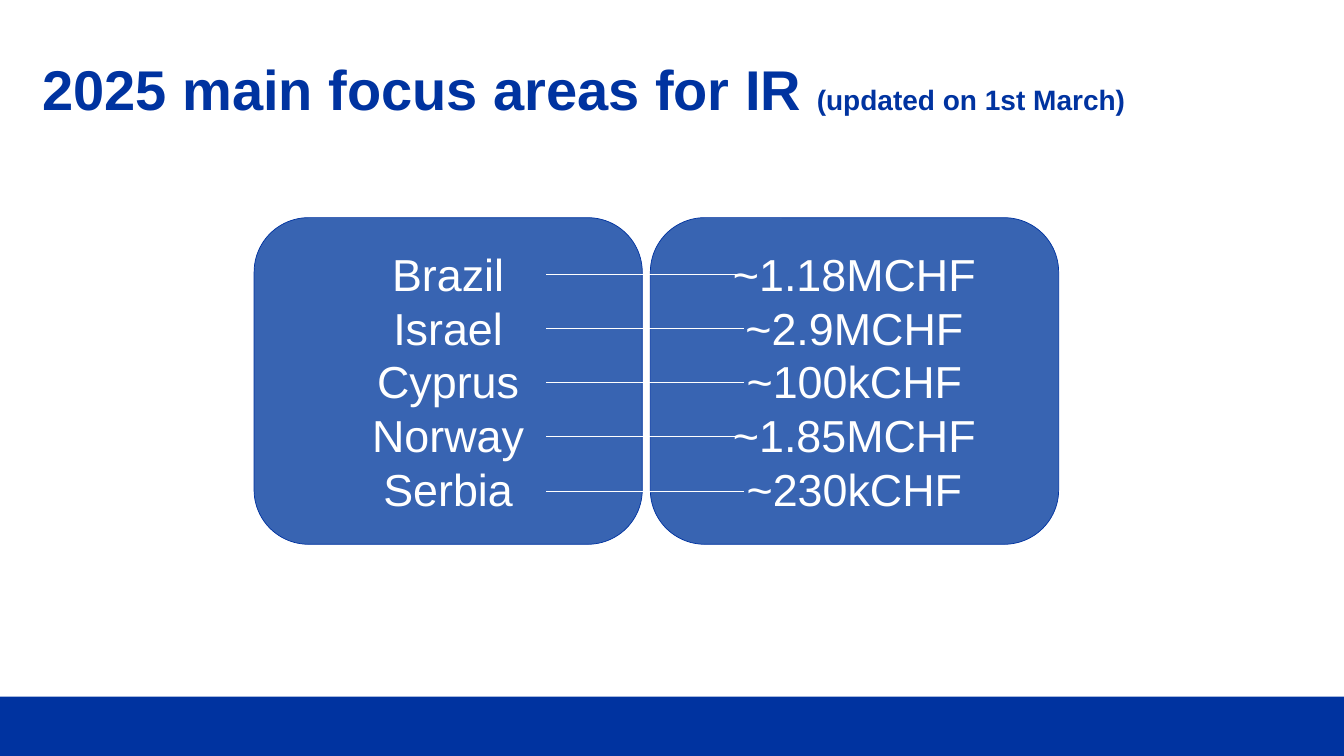
from lxml import etree
from pptx import Presentation
from pptx.dml.color import RGBColor
from pptx.enum.shapes import MSO_CONNECTOR, MSO_SHAPE
from pptx.enum.text import MSO_ANCHOR, MSO_AUTO_SIZE, PP_ALIGN
from pptx.oxml.ns import qn
from pptx.util import Inches, Pt

RECTANGLE, ROUNDED = MSO_SHAPE.RECTANGLE, MSO_SHAPE.ROUNDED_RECTANGLE
STRAIGHT = MSO_CONNECTOR.STRAIGHT
TOP, MIDDLE = MSO_ANCHOR.TOP, MSO_ANCHOR.MIDDLE
LEFT, CENTER = PP_ALIGN.LEFT, PP_ALIGN.CENTER

# Content
TITLE = [("2025 main focus areas for IR ", 40), ("(updated on 1st March)", 20)]
FOCUS_AREAS = [
    ("Brazil", "~1.18MCHF"),
    ("Israel", "~2.9MCHF"),
    ("Cyprus", "~100kCHF"),
    ("Norway", "~1.85MCHF"),
    ("Serbia", "~230kCHF"),
]

# Look and layout, in inches
FONT = "Arial"
NAVY, BLUE, WHITE = "0033A0", "3864B2", "FFFFFF"
PAGE_WIDTH, PAGE_HEIGHT, FOOTER_HEIGHT = 13.33, 7.5, 0.59
PANEL_TOP, PANEL_HEIGHT = 2.16, 3.24
PANELS = [(2.52, 3.85), (6.45, 4.05)]  # left, width
LINE_LEFT, LINE_RIGHT = 5.42, 7.38
FIRST_LINE, LAST_LINE = 2.72, 4.87


def color(value):
    return RGBColor.from_string(value)


def add_block(page, kind, left, top, width, height, fill, outline=None):
    block = page.shapes.add_shape(
        kind, Inches(left), Inches(top), Inches(width), Inches(height))
    block.shadow.inherit = False
    block.fill.solid()
    block.fill.fore_color.rgb = color(fill)
    if outline:
        block.line.color.rgb = color(outline)
        block.line.width = Pt(0.5)
    else:
        block.line.fill.background()
    return block


def add_title(page):
    title = page.shapes.title
    title.left, title.top = Inches(0.42), Inches(0.62)
    title.width, title.height = Inches(11.38), Inches(1.26)
    frame = title.text_frame
    frame.margin_left = frame.margin_right = 0
    frame.margin_top = frame.margin_bottom = 0
    frame.vertical_anchor = TOP
    frame.word_wrap = True
    frame.auto_size = MSO_AUTO_SIZE.NONE
    para = frame.paragraphs[0]
    para.alignment = LEFT
    para.line_spacing = 0.9
    para.font.name = FONT
    para.font.bold = True
    para.font.color.rgb = color(NAVY)
    for words, size in TITLE:
        span = para.add_run()
        span.text = words
        span.font.size = Pt(size)


def add_panel(page, left, width, entries):
    panel = add_block(page, ROUNDED, left, PANEL_TOP, width, PANEL_HEIGHT, BLUE, NAVY)
    frame = panel.text_frame
    frame.word_wrap = True
    frame.vertical_anchor = MIDDLE
    frame.text = "\n".join(entries)
    for para in frame.paragraphs:
        para.alignment = CENTER
        para.font.name = FONT
        para.font.size = Pt(32)
        para.font.color.rgb = color(WHITE)


def add_link(page, height):
    link = page.shapes.add_connector(
        STRAIGHT, Inches(LINE_LEFT), Inches(height), Inches(LINE_RIGHT), Inches(height))
    link.line.color.rgb = color(WHITE)
    link.line.width = Pt(0.5)
    etree.SubElement(link._element.spPr, qn("a:effectLst"))


def main():
    deck = Presentation()
    deck.slide_width, deck.slide_height = Inches(PAGE_WIDTH), Inches(PAGE_HEIGHT)
    page = deck.slides.add_slide(deck.slide_layouts[5])

    # Footer band and title
    add_block(page, RECTANGLE, 0, PAGE_HEIGHT - FOOTER_HEIGHT,
              PAGE_WIDTH, FOOTER_HEIGHT, NAVY)
    add_title(page)

    # Country panel and budget panel
    for (left, width), entries in zip(PANELS, zip(*FOCUS_AREAS)):
        add_panel(page, left, width, entries)

    # One line from each country to its budget
    step = (LAST_LINE - FIRST_LINE) / (len(FOCUS_AREAS) - 1)
    for row in range(len(FOCUS_AREAS)):
        add_link(page, FIRST_LINE + row * step)

    deck.save("out.pptx")


if __name__ == "__main__":
    main()
